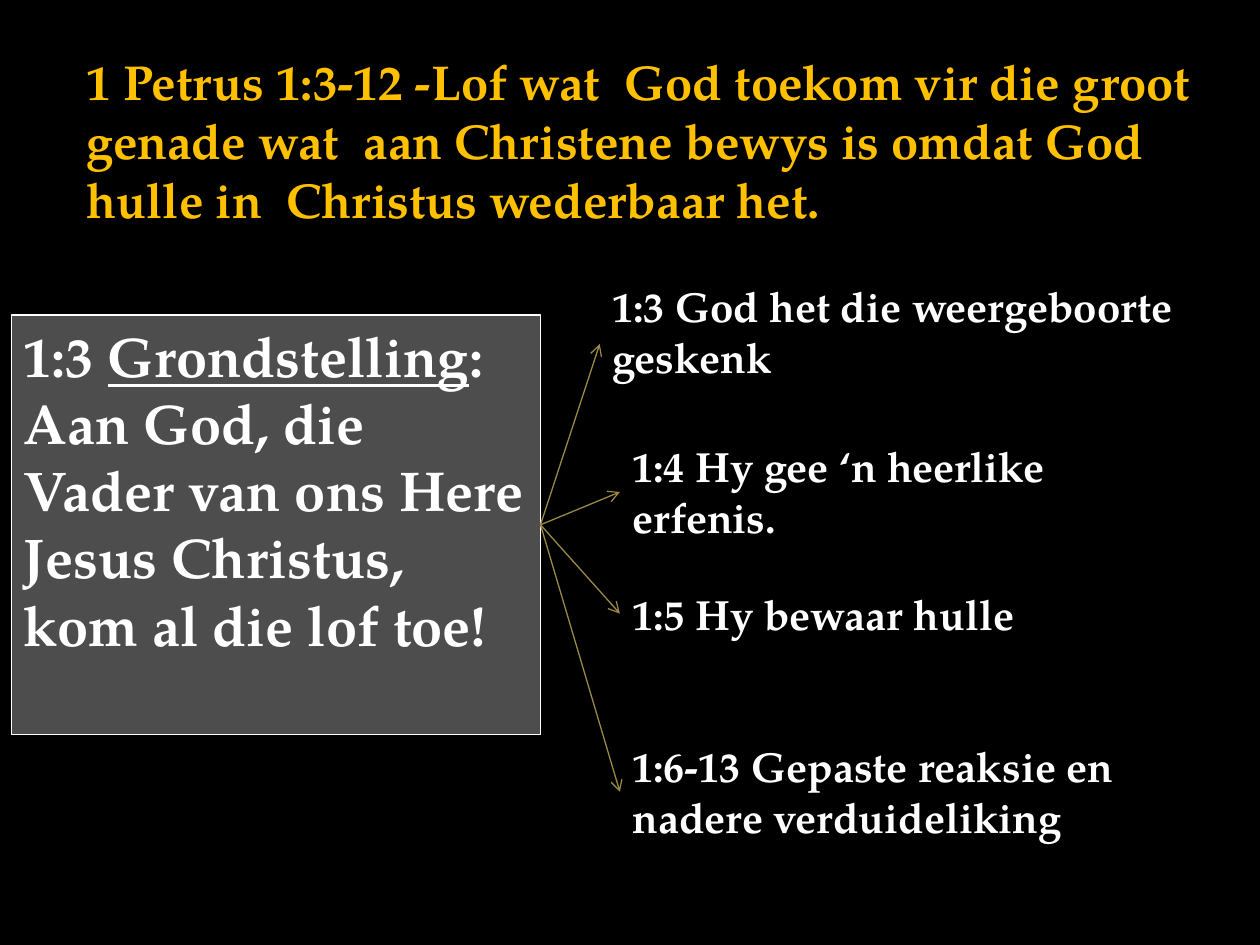
from dataclasses import dataclass
from typing import Optional

from lxml.etree import SubElement
from pptx import Presentation
from pptx.dml.color import RGBColor
from pptx.enum.shapes import MSO_CONNECTOR, MSO_SHAPE
from pptx.enum.text import MSO_ANCHOR, PP_ALIGN
from pptx.oxml.ns import qn
from pptx.util import Inches, Pt

FONT = "TeX Gyre Pagella"
BLACK = RGBColor(0x00, 0x00, 0x00)
WHITE = RGBColor(0xFF, 0xFF, 0xFF)
AMBER = RGBColor(0xFF, 0xC0, 0x00)
BRONZE = RGBColor(0x99, 0x89, 0x46)
TOP, LEFT, BOTTOM, RIGHT = range(4)


@dataclass
class Point:
    text: str
    left: float
    top: float
    width: float
    height: float = 0.91
    tip: Optional[float] = None  # arrow height, when not the middle of the side


POINTS = [
    Point("1:3 God het die weergeboorte geskenk", 4.76, 2.18, 4.65, tip=2.73),
    Point("1:4 Hy gee ‘n heerlike erfenis.", 4.92, 3.45, 4.49),
    Point("1:5 Hy bewaar hulle", 4.92, 4.62, 4.8, 0.5),
    Point("1:6-13 Gepaste reaksie en nadere verduideliking", 4.92, 5.83, 4.88),
]


def style(para, size: float, color: RGBColor) -> None:
    para.alignment = PP_ALIGN.LEFT
    font = para.font
    font.name, font.size, font.bold = FONT, Pt(size), True
    font.color.rgb = color


def add_text(slide, text: str, left: float, top: float, width: float,
             height: float, size: float, color: RGBColor):
    box = slide.shapes.add_textbox(
        Inches(left), Inches(top), Inches(width), Inches(height))
    box.text_frame.word_wrap = True
    para = box.text_frame.paragraphs[0]
    para.text = text
    style(para, size, color)
    return box


def add_thesis(slide):
    """Draw the see-through box with the main statement."""
    box = slide.shapes.add_shape(
        MSO_SHAPE.RECTANGLE, Inches(0.09), Inches(2.5), Inches(4.2), Inches(3.33))
    box.shadow.inherit = False
    box.fill.solid()
    box.fill.fore_color.rgb = WHITE
    color = box.fill._xPr.find(qn("a:solidFill"))[0]
    SubElement(color, qn("a:alpha"), val="30000")
    box.line.color.rgb = WHITE
    box.line.width = Pt(0.75)

    frame = box.text_frame
    frame.word_wrap = True
    frame.vertical_anchor = MSO_ANCHOR.TOP
    head = frame.paragraphs[0]
    for text in ("1:3 ", "Grondstelling", ":"):
        run = head.add_run()
        run.text = text
        if text == "Grondstelling":
            run.font.underline = True
    body = frame.add_paragraph()
    body.text = "Aan God, die Vader van ons Here Jesus Christus, kom al die lof toe!"
    for para in (head, body):
        style(para, 32, WHITE)
    return box


def add_arrow(slide, start, end, point: Point) -> None:
    tip = point.tip or point.top + point.height / 2
    line = slide.shapes.add_connector(
        MSO_CONNECTOR.STRAIGHT, Inches(4.29), Inches(4.17),
        Inches(point.left), Inches(tip))
    line.begin_connect(start, RIGHT)
    if point.tip is None:
        line.end_connect(end, LEFT)
    line.line.color.rgb = BRONZE
    line.line.width = Pt(0.75)
    SubElement(line.line._get_or_add_ln(), qn("a:tailEnd"), type="arrow")
    SubElement(line._element.spPr, qn("a:effectLst"))


def main() -> None:
    deck = Presentation()
    deck.slide_width, deck.slide_height = Inches(10), Inches(7.5)
    slide = deck.slides.add_slide(deck.slide_layouts[6])
    slide.background.fill.solid()
    slide.background.fill.fore_color.rgb = BLACK

    add_text(slide, "1 Petrus 1:3-12 -Lof wat  God toekom vir die groot genade "
             "wat  aan Christene bewys is omdat God hulle in  Christus "
             "wederbaar het.", 0.59, 0.36, 9.13, 1.51, 28, AMBER)
    thesis = add_thesis(slide)
    for point in POINTS:
        box = add_text(slide, point.text, point.left, point.top,
                       point.width, point.height, 24, WHITE)
        add_arrow(slide, thesis, box, point)
    deck.save("out.pptx")


if __name__ == "__main__":
    main()
